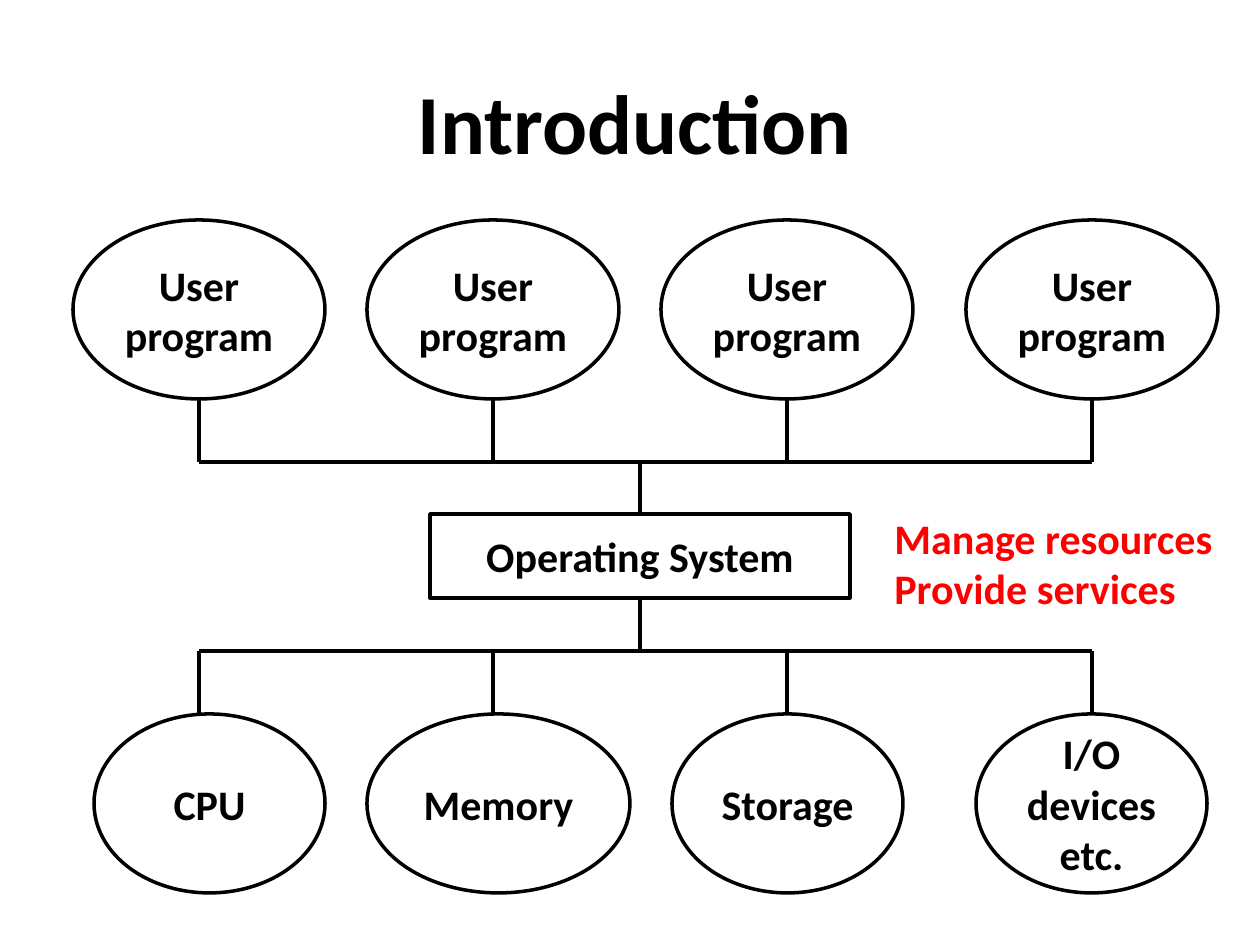
from lxml import etree
from pptx import Presentation
from pptx.dml.color import RGBColor
from pptx.enum.shapes import MSO_CONNECTOR, MSO_SHAPE
from pptx.enum.text import MSO_ANCHOR, PP_ALIGN
from pptx.oxml.ns import qn
from pptx.util import Pt

PX = 914400 // 126
STRAIGHT = MSO_CONNECTOR.STRAIGHT
OVAL, RECTANGLE = MSO_SHAPE.OVAL, MSO_SHAPE.RECTANGLE
MIDDLE = MSO_ANCHOR.MIDDLE
CENTER, LEFT = PP_ALIGN.CENTER, PP_ALIGN.LEFT
BLACK, RED = "000000", "FF0000"
LABEL = {"name": "Calibri", "size": Pt(24), "bold": True}
HEADING = {**LABEL, "size": Pt(48)}

TITLE = ("Introduction", (73, 63, 1124, 115))
SYSTEM = ("Operating System", (430, 514, 420, 84))
ROLES = ("Manage resources\vProvide services", (882, 505, 368, 115))

# label, left, width
PROGRAMS = [("User program", left, 252) for left in (73, 367, 661, 966)]
RESOURCES = [
    ("CPU", 94, 231),
    ("Memory", 367, 263),
    ("Storage", 672, 231),
    ("I/O devices\vetc.", 976, 231),
]
OVAL_HEIGHT = 179
PROGRAMS_TOP, RESOURCES_TOP = 220, 714
PROGRAMS_BUS, RESOURCES_BUS = 462, 651


def emu(*lengths):
    return [length * PX for length in lengths]


def color(value):
    return RGBColor.from_string(value)


def write(frame, text, font=LABEL, ink=BLACK, align=CENTER):
    frame.word_wrap = True
    frame.vertical_anchor = MIDDLE
    frame.text = text
    paragraph = frame.paragraphs[0]
    paragraph.alignment = align
    for run in paragraph.runs:
        for key, value in font.items():
            setattr(run.font, key, value)
        run.font.color.rgb = color(ink)


def outline(line):
    line.color.rgb = color(BLACK)
    line.width = Pt(2)


def add_node(slide, kind, text, box):
    node = slide.shapes.add_shape(kind, *emu(*box))
    node.shadow.inherit = False
    node.fill.background()
    outline(node.line)
    write(node.text_frame, text)


def add_link(slide, *ends):
    link = slide.shapes.add_connector(STRAIGHT, *emu(*ends))
    outline(link.line)
    etree.SubElement(link._element.spPr, qn("a:effectLst"))


def add_bus(slide, y, oval_edge, system_edge):
    """Join every oval in a row, and the system box, to one level line."""
    stems = [left + width // 2 for _, left, width in PROGRAMS]
    add_link(slide, stems[0], y, stems[-1], y)
    for x in stems:
        add_link(slide, x, oval_edge, x, y)
    left, _, width, _ = SYSTEM[1]
    center = left + width // 2
    add_link(slide, center, y, center, system_edge)


def main():
    deck = Presentation()
    deck.slide_width, deck.slide_height = emu(1260, 945)
    slide = deck.slides.add_slide(deck.slide_layouts[5])

    heading, box = TITLE
    title = slide.shapes.title
    title.left, title.top, title.width, title.height = emu(*box)
    write(title.text_frame, heading, HEADING)

    add_node(slide, RECTANGLE, *SYSTEM)
    for row, top in ((RESOURCES, RESOURCES_TOP), (PROGRAMS, PROGRAMS_TOP)):
        for label, left, width in row:
            add_node(slide, OVAL, label, (left, top, width, OVAL_HEIGHT))

    roles, box = ROLES
    note = slide.shapes.add_textbox(*emu(*box))
    write(note.text_frame, roles, ink=RED, align=LEFT)

    _, system_top, _, system_height = SYSTEM[1]
    add_bus(slide, PROGRAMS_BUS, PROGRAMS_TOP + OVAL_HEIGHT, system_top)
    add_bus(slide, RESOURCES_BUS, RESOURCES_TOP, system_top + system_height)

    deck.save("out.pptx")


if __name__ == "__main__":
    main()
